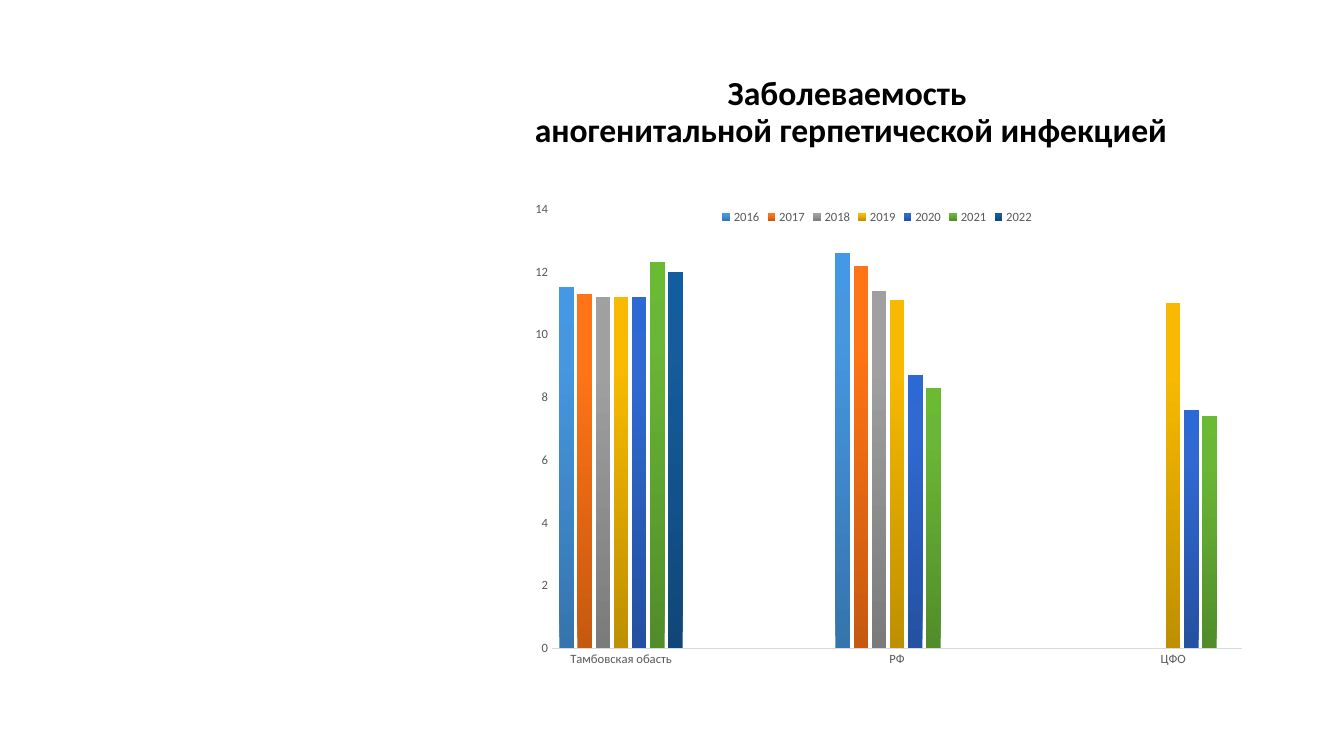
from dataclasses import dataclass

from pptx import Presentation
from pptx.chart.data import CategoryChartData
from pptx.dml.color import RGBColor
from pptx.enum import chart as ch, text
from pptx.oxml import ns, parse_xml
from pptx.util import Cm, Pt


@dataclass(frozen=True)
class Theme:
    font: str = "Calibri"
    title_size: int = 24
    label_size: int = 9
    title: str = "000000"
    label: str = "595959"
    axis: str = "D9D9D9"
    # Bottom, 80 % and top colour of each year's columns
    columns: tuple = (
        ("3674AD", "4697E0", "4498E4"),
        ("C65910", "FF7416", "FF7517"),
        ("7B7B7B", "A0A0A0", "A1A1A1"),
        ("BE8F00", "F7BA00", "F8BB00"),
        ("2451A1", "2F69D1", "2C69D5"),
        ("518D2A", "6AB636", "6ABA34"),
        ("104778", "145C9C", "125CA0"),
    )


THEME = Theme()

REGIONS = ["Тамбовская обасть", "", "РФ", "", "ЦФО"]
RATES = {
    "2016": (11.5, None, 12.6, None, None),
    "2017": (11.3, None, 12.2, None, None),
    "2018": (11.2, None, 11.4, None, None),
    "2019": (11.2, None, 11.1, None, 11),
    "2020": (11.2, None, 8.7, None, 7.6),
    "2021": (12.3, None, 8.3, None, 7.4),
    "2022": (12, None, None, None, None),
}


def set_font(font, size, color, bold=False):
    font.name = THEME.font
    font.size = Pt(size)
    font.bold = bold
    font.color.rgb = RGBColor.from_string(color)


def add_text(tf, content, size, color, bold=False, align=text.PP_ALIGN.CENTER,
             anchor=text.MSO_ANCHOR.MIDDLE, spacing=0.9):
    tf.word_wrap = True
    tf.auto_size = text.MSO_AUTO_SIZE.NONE
    tf.vertical_anchor = anchor
    p = tf.paragraphs[0]
    p.text = content
    p.alignment = align
    p.line_spacing = spacing
    for r in p.runs:
        set_font(r.font, size, color, bold)


def gradient_fill(series, colors):
    """Fill the columns from the bottom up."""
    stops = "".join(
        f'<a:gs pos="{pos * 1000}"><a:srgbClr val="{color}"/></a:gs>'
        for pos, color in zip((0, 80, 100), colors))
    series._element.get_or_add_spPr().append(parse_xml(
        f'<a:gradFill {ns.nsdecls("a")} rotWithShape="1"><a:gsLst>{stops}</a:gsLst>'
        '<a:lin ang="16200000" scaled="0"/></a:gradFill>'))


def set_plot_layout(chart, x, y, w, h):
    """Fix the inner plot area, in fractions of the chart."""
    area = chart._chartSpace.chart.plotArea
    for old in area.findall(ns.qn("c:layout")):
        area.remove(old)
    sizes = "".join(f'<c:{tag} val="{val}"/>'
                    for tag, val in zip("xywh", (x, y, w, h)))
    area.insert(0, parse_xml(
        f'<c:layout {ns.nsdecls("c")}><c:manualLayout><c:layoutTarget val="inner"/>'
        f'<c:xMode val="edge"/><c:yMode val="edge"/>{sizes}'
        '</c:manualLayout></c:layout>'))


def place_title(s, left, top, width, height):
    sp = s.shapes.title
    sp.left, sp.top, sp.width, sp.height = left, top, width, height
    add_text(sp.text_frame, "Заболеваемость\v аногенитальной герпетической инфекцией",
             THEME.title_size, THEME.title, bold=True)


def place_chart(s, left, top, width, height):
    data = CategoryChartData()
    data.categories = REGIONS
    for year, rates in RATES.items():
        data.add_series(year, rates)
    chart = s.shapes.add_chart(ch.XL_CHART_TYPE.COLUMN_CLUSTERED,
                               left, top, width, height, data).chart
    chart.has_title = False
    set_font(chart.font, THEME.label_size, THEME.label)
    set_plot_layout(chart, 0.055, 0.022, 0.945, 0.906)

    # Columns
    plot = chart.plots[0]
    plot.gap_width = 100
    plot.overlap = -24
    plot.vary_by_categories = False
    for series, colors in zip(plot.series, THEME.columns):
        gradient_fill(series, colors)

    # Axes
    for axis in (chart.category_axis, chart.value_axis):
        axis.has_major_gridlines = False
        axis.major_tick_mark = axis.minor_tick_mark = ch.XL_TICK_MARK.NONE
        set_font(axis.tick_labels.font, THEME.label_size, THEME.label)
    line = chart.category_axis.format.line
    line.color.rgb = RGBColor.from_string(THEME.axis)
    line.width = Pt(1)
    values = chart.value_axis
    values.format.line.fill.background()
    values.minimum_scale, values.maximum_scale, values.major_unit = 0, 14, 2

    # Legend
    chart.has_legend = True
    chart.legend.position = ch.XL_LEGEND_POSITION.TOP
    chart.legend.include_in_layout = False
    set_font(chart.legend.font, THEME.label_size, THEME.label)


def main():
    prs = Presentation()
    prs.slide_width, prs.slide_height = Cm(33.87), Cm(19.05)
    s = prs.slides.add_slide(prs.slide_layouts[5])
    place_chart(s, Cm(12.9), Cm(5), Cm(18.42), Cm(12.22))
    place_title(s, Cm(11.15), Cm(1.02), Cm(20.4), Cm(3.66))
    prs.save("out.pptx")


if __name__ == "__main__":
    main()
